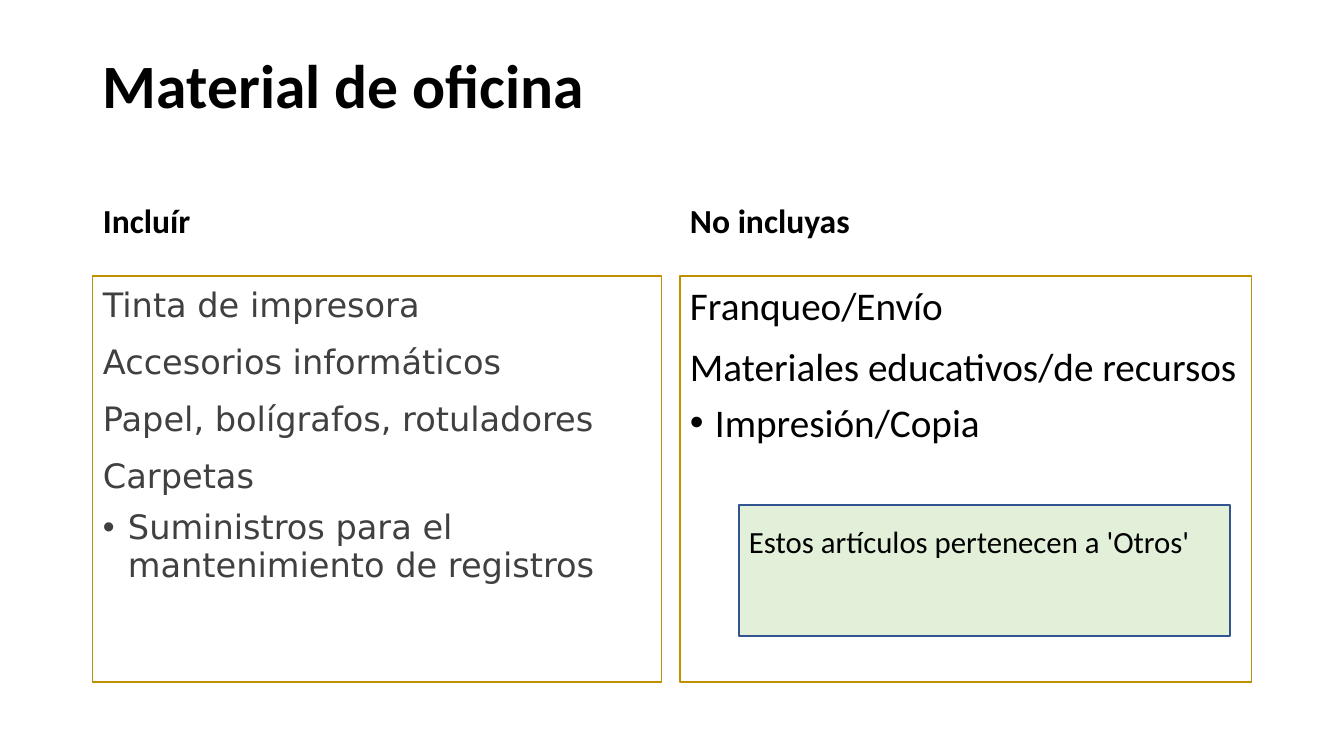
from lxml import etree
from pptx import Presentation
from pptx.dml.color import RGBColor
from pptx.enum.shapes import MSO_SHAPE
from pptx.enum.text import MSO_ANCHOR, MSO_AUTO_SIZE, PP_ALIGN
from pptx.oxml.ns import qn
from pptx.util import Emu, Pt

RECTANGLE = MSO_SHAPE.RECTANGLE
TOP, BOTTOM = MSO_ANCHOR.TOP, MSO_ANCHOR.BOTTOM
LEFT = PP_ALIGN.LEFT
NO_AUTOFIT = MSO_AUTO_SIZE.NONE
TITLE_ONLY = 5
EMU_PER_PX = 914400 / 100.8
COLORS = {"text": "000000", "muted": "404040", "gold": "BF9000",
          "green": "E2F0D9", "blue": "325491"}


def px(length):
    return Emu(round(length * EMU_PER_PX))


class SlideBuilder:
    def __init__(self, presentation):
        self.slide = presentation.slides.add_slide(
            presentation.slide_layouts[TITLE_ONLY])

    def color(self, name):
        return RGBColor.from_string(COLORS[name])

    def frame(self, shape, anchor, bottom=5):
        text_frame = shape.text_frame
        text_frame.word_wrap = True
        text_frame.auto_size = NO_AUTOFIT
        text_frame.vertical_anchor = anchor
        text_frame.margin_left = text_frame.margin_right = px(10)
        text_frame.margin_top = px(5)
        text_frame.margin_bottom = px(bottom)
        return text_frame

    def style_paragraph(self, paragraph, size, font="Calibri", color="text", bold=False):
        paragraph.alignment = LEFT
        for run in paragraph.runs:
            run.font.name = font
            run.font.size = Pt(size)
            run.font.bold = bold
            run.font.color.rgb = self.color(color)

    def label(self, shape, text, size, bottom, bold=False):
        text_frame = self.frame(shape, BOTTOM, bottom)
        text_frame.text = text
        self.style_paragraph(text_frame.paragraphs[0], size, bold=bold)

    def title(self, text, box, size, bottom):
        title = self.slide.shapes.title
        title.left, title.top, title.width, title.height = map(px, box)
        self.label(title, text, size, bottom, bold=True)

    def heading(self, text, box):
        shape = self.slide.shapes.add_textbox(*map(px, box))
        self.label(shape, text, 24, 36, bold=True)

    def rectangle(self, box, line, width, fill=None):
        shape = self.slide.shapes.add_shape(RECTANGLE, *map(px, box))
        shape.shadow.inherit = False
        if fill:
            shape.fill.solid()
            shape.fill.fore_color.rgb = self.color(fill)
        else:
            shape.fill.background()
        shape.line.color.rgb = self.color(line)
        shape.line.width = Pt(width)
        return shape

    def item_list(self, items, box, size, font, color, spacing, last_spacing):
        shape = self.rectangle(box, "gold", 0.75)
        text_frame = self.frame(shape, TOP)
        for index, item in enumerate(items):
            paragraph = text_frame.paragraphs[0] if index == 0 else text_frame.add_paragraph()
            paragraph.text = item
            paragraph.space_before = Pt(10 if index else 0)
            paragraph.line_spacing = spacing
            self.style_paragraph(paragraph, size, font, color)
        paragraph.line_spacing = last_spacing
        self.bullet(paragraph)

    def bullet(self, paragraph):
        properties = paragraph._p.get_or_add_pPr()
        properties.set("marL", str(px(25)))
        properties.set("indent", str(-px(25)))
        etree.SubElement(properties, qn("a:buFont")).set("typeface", "Arial")
        etree.SubElement(properties, qn("a:buChar")).set("char", "•")

    def note(self, text, box):
        shape = self.rectangle(box, "blue", 1, "green")
        self.label(shape, text, 22, 76)


def main():
    presentation = Presentation()
    presentation.slide_width, presentation.slide_height = px(1344), px(756)
    builder = SlideBuilder(presentation)
    builder.title("Material de oficina", (93, 40, 1159, 146), 44, 65)
    columns = [
        ("Incluír", 93, 569, 24, "DejaVu Sans", "muted", 1.07, 0.94,
         ["Tinta de impresora", "Accesorios informáticos",
          "Papel, bolígrafos, rotuladores", "Carpetas",
          "Suministros para el mantenimiento de registros"]),
        ("No incluyas", 680, 572, 28, "Calibri", "text", 1.0, 0.9,
         ["Franqueo/Envío", "Materiales educativos/de recursos",
          "Impresión/Copia"]),
    ]
    for heading, left, width, size, font, color, spacing, last_spacing, items in columns:
        builder.heading(heading, (left, 186, width, 90))
        builder.item_list(items, (left, 276, width, 406), size, font, color,
                          spacing, last_spacing)
    builder.note("Estos artículos pertenecen a 'Otros'", (739, 505, 491, 131))
    presentation.save("out.pptx")


if __name__ == "__main__":
    main()
